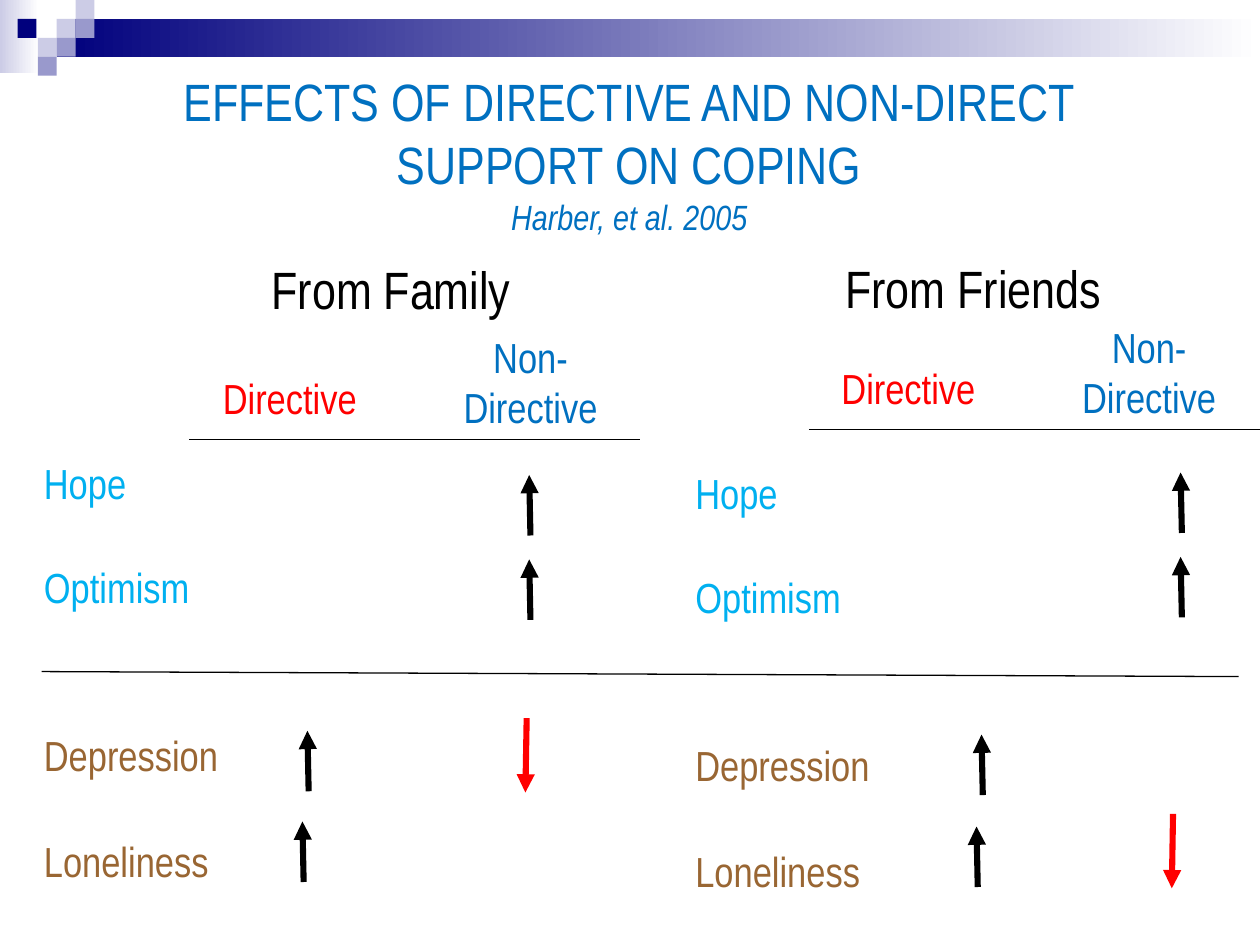
from pptx import Presentation
from pptx.dml.color import RGBColor
from pptx.enum import shapes as es, text as et
from pptx.oxml.ns import qn
from pptx.util import Inches, Pt
from lxml import etree

FONT = "Arial Narrow"
BLUE, RED, BLACK = "0070C0", "FF0000", "000000"
SKY, BROWN = "00B0F0", "996633"
NAVY, MID, PALE, WHITE = "00007D", "9999CC", "CCCCE6", "FFFFFF"
LEFT, MIDDLE = et.PP_ALIGN.LEFT, et.PP_ALIGN.CENTER

# Content: header art
BANDS = [((0, 0, 0.31, 0.58), PALE), ((0.45, 0.15, 9.55, 0.3), NAVY)]
TILE = 0.15
TILES = [(3, 1, PALE), (4, 0, PALE), (4, 1, MID), (2, 2, PALE),
         (0.93, 1, NAVY), (3, 2, MID), (2, 3, MID)]

# Content: title lines and outcome rows (text, top, width, colour)
TITLE = [("EFFECTS OF DIRECTIVE AND NON-DIRECT SUPPORT ON COPING", 30, False),
         ("Harber, et al. 2005", 20, True)]
ROWS = [("Hope", 3.58, 1.42, SKY), ("Optimism", 4.41, 1.58, SKY),
        ("Depression", 5.74, 1.75, BROWN), ("Loneliness", 6.58, 1.67, BROWN)]

# Content: the two panels; arrows are (x at tip, y at tip, colour)
PANELS = [
    {"head": ("From Family", 1.73, 1.99, 2.75), "rows": (0.25, 0),
     "cols": (1.67, 2.58), "rule": (1.5, 5.08),
     "arrows": [(4.2, 3.77, BLACK), (4.2, 4.44, BLACK), (2.44, 5.8, BLACK),
                (2.4, 6.52, BLACK), (4.17, 6.29, RED)]},
    {"head": ("From Friends", 5.95, 1.98, 3.55), "rows": (5.42, 0.08),
     "cols": (6.58, 2.5), "rule": (6.42, 10),
     "arrows": [(9.37, 3.75, BLACK), (9.37, 4.42, BLACK), (7.79, 5.83, BLACK),
                (7.75, 6.56, BLACK), (9.3, 7.05, RED)]},
]
RISE = {BLACK: 0.48, RED: -0.59}  # tail sits this far below the tip


def rgb(code):
    return RGBColor.from_string(code)


def block(box, color, fade=False):
    shape = slide.shapes.add_shape(es.MSO_SHAPE.RECTANGLE, *map(Inches, box))
    shape.shadow.inherit = False
    shape.line.fill.background()
    if fade:
        shape.fill.gradient()
        shape.fill.gradient_angle = 0
        for stop, code in zip(shape.fill.gradient_stops, (color, WHITE)):
            stop.color.rgb = rgb(code)
    else:
        shape.fill.solid()
        shape.fill.fore_color.rgb = rgb(color)


def write(frame, lines, color, align):
    """Lines are (text, size, italic)."""
    form = {"word_wrap": True, "vertical_anchor": et.MSO_ANCHOR.TOP,
            "auto_size": et.MSO_AUTO_SIZE.SHAPE_TO_FIT_TEXT}
    for name, value in form.items():
        setattr(frame, name, value)
    for i, (words, size, slant) in enumerate(lines):
        para = frame.add_paragraph() if i else frame.paragraphs[0]
        para.alignment = align
        run = para.add_run()
        run.text = words
        for name, value in {"name": FONT, "size": Pt(size), "italic": slant}.items():
            setattr(run.font, name, value)
        run.font.color.rgb = rgb(color)


def label(words, box, color, size=24, align=LEFT):
    area = slide.shapes.add_textbox(*map(Inches, box))
    lines = [(line, size, False) for line in words.split("\n")]
    write(area.text_frame, lines, color, align)


def line(start, end, color=BLACK, width=0.75, arrow=False):
    item = slide.shapes.add_connector(
        es.MSO_CONNECTOR.STRAIGHT, *map(Inches, start + end))
    item.line.color.rgb = rgb(color)
    item.line.width = Pt(width)
    if arrow:
        etree.SubElement(item.line._get_or_add_ln(), qn("a:tailEnd"), type="triangle")
    etree.SubElement(item._element.spPr, qn("a:effectLst"))


deck = Presentation()
deck.slide_width, deck.slide_height = Inches(10), Inches(7.5)
slide = deck.slides.add_slide(deck.slide_layouts[5])

# Header art
for box, color in BANDS:
    block(box, color, fade=True)
for col, row, color in TILES:
    block((col * TILE, row * TILE, TILE, TILE), color)

# Title
title = slide.shapes.title
spot = dict(zip(("left", "top", "width", "height"), (0.83, 0.5, 8.33, 1.45)))
for name, value in spot.items():
    setattr(title, name, Inches(value))
write(title.text_frame, TITLE, BLUE, MIDDLE)

# Panels
for panel in PANELS:
    words, x, y, wide = panel["head"]
    label(words, (x, y, wide, 0.61), BLACK, 30, MIDDLE)

    x, y = panel["cols"]
    label("Directive", (x, y + 0.33, 1.5, 0.51), RED)
    label("Non-\nDirective", (x + 1.75, y, 1.58, 0.91), BLUE, align=MIDDLE)
    start, end = panel["rule"]
    line((start, y + 0.91), (end, y + 0.91))

    x, drop = panel["rows"]
    for words, y, wide, color in ROWS:
        label(words, (x, y + drop, wide, 0.51), color)
    for x, y, color in panel["arrows"]:
        line((x + 0.01, y + RISE[color]), (x, y), color, 3.5, arrow=True)

# Divider between gains and harms
line((0.33, 5.33), (9.83, 5.37))

deck.save("out.pptx")
